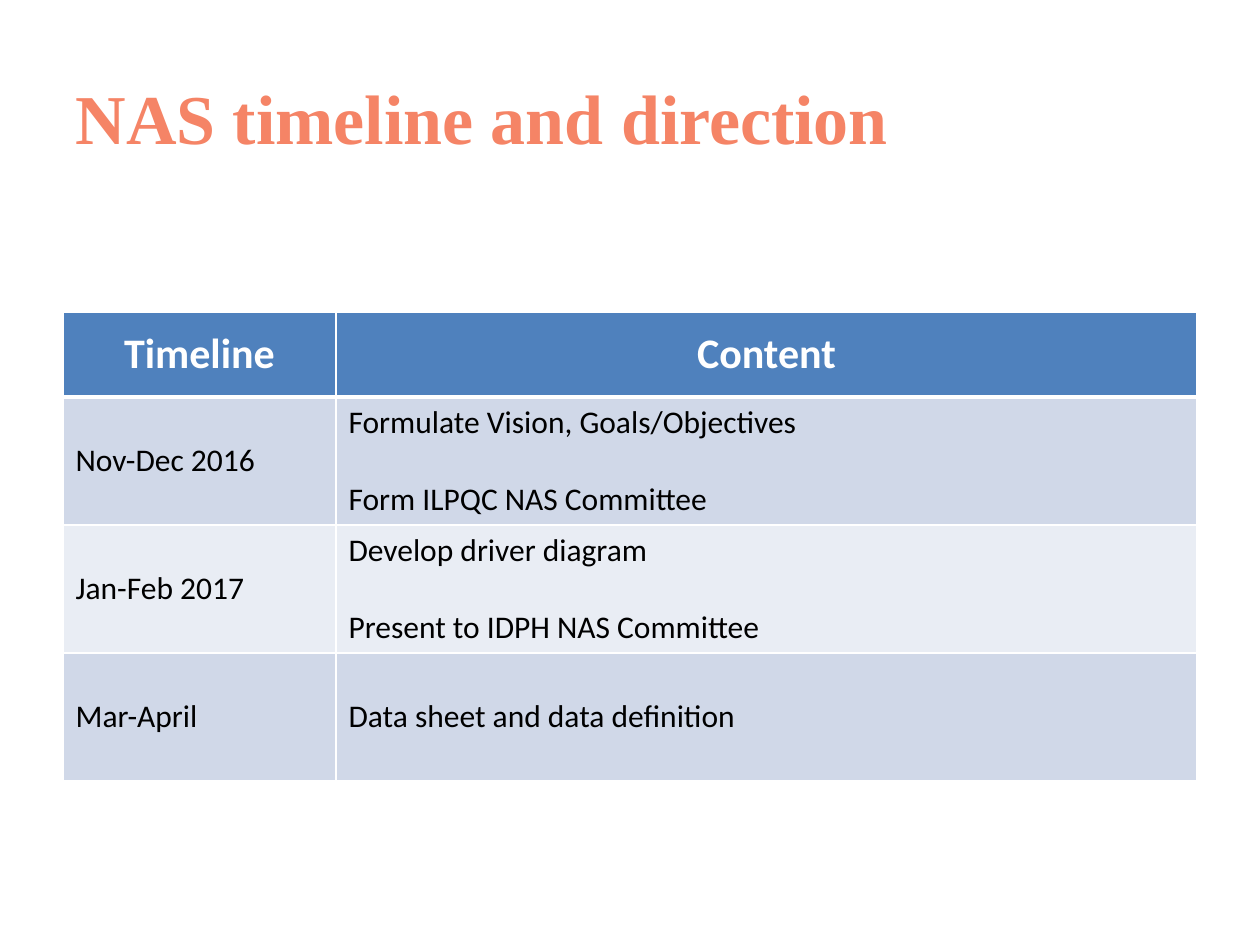
"""Build the NAS timeline slide with its title and schedule table."""
from lxml.etree import SubElement
from pptx import Presentation
from pptx.dml.color import RGBColor
from pptx.enum.text import MSO_ANCHOR, PP_ALIGN
from pptx.oxml.ns import qn
from pptx.util import Emu, Pt

PIXELS_PER_INCH = 126
CORAL = RGBColor(0xF5, 0x84, 0x66)
BLUE = RGBColor(0x4F, 0x81, 0xBD)
BAND_DARK = RGBColor(0xD0, 0xD8, 0xE8)
BAND_LIGHT = RGBColor(0xE9, 0xED, 0xF4)
WHITE = RGBColor(0xFF, 0xFF, 0xFF)
BLACK = RGBColor(0x00, 0x00, 0x00)

COLUMN_WIDTHS = (273, 861)
HEADER_HEIGHT = 85
ROW_HEIGHT = 128
ROWS = (
    ("Timeline", "Content"),
    ("Nov-Dec 2016", "Formulate Vision, Goals/Objectives\nForm ILPQC NAS Committee"),
    ("Jan-Feb 2017", "Develop driver diagram\nPresent to IDPH NAS Committee"),
    ("Mar-April", "Data sheet and data definition"),
)


def px(length):
    return Emu(round(length * 914400 / PIXELS_PER_INCH))


def format_paragraph(paragraph, font_name, size, color, bold, alignment):
    paragraph.alignment = alignment
    for run in paragraph.runs:
        run.font.name = font_name
        run.font.size = Pt(size)
        run.font.bold = bold
        run.font.color.rgb = color


def add_title(slide, text):
    title = slide.shapes.title
    title.left, title.top, title.width, title.height = px(63), px(38), px(1134), px(157)
    title.text_frame.text = text
    title.text_frame.vertical_anchor = MSO_ANCHOR.MIDDLE
    format_paragraph(title.text_frame.paragraphs[0], "Times New Roman", 40, CORAL, True, PP_ALIGN.LEFT)


def set_borders(cell, bottom_width):
    properties = cell._tc.get_or_add_tcPr()
    widths = {"a:lnL": 1, "a:lnR": 1, "a:lnT": 1, "a:lnB": bottom_width}
    for tag, width in widths.items():
        line = SubElement(properties, qn(tag), w=str(Pt(width)))
        fill = SubElement(line, qn("a:solidFill"))
        SubElement(fill, qn("a:srgbClr"), val=str(WHITE))


def fill_cell(cell, text, row_index):
    is_header = row_index == 0
    set_borders(cell, 3 if is_header else 1)
    cell.fill.solid()
    cell.fill.fore_color.rgb = BLUE if is_header else (BAND_LIGHT, BAND_DARK)[row_index % 2]
    cell.vertical_anchor = MSO_ANCHOR.MIDDLE
    cell.text_frame.text = text
    for index, paragraph in enumerate(cell.text_frame.paragraphs):
        if is_header:
            format_paragraph(paragraph, "Calibri", 24, WHITE, True, PP_ALIGN.CENTER)
        else:
            format_paragraph(paragraph, "Calibri", 18, BLACK, False, PP_ALIGN.LEFT)
        if index:
            paragraph.space_before = Pt(22)


def add_schedule(slide):
    heights = [HEADER_HEIGHT] + [ROW_HEIGHT] * (len(ROWS) - 1)
    table = slide.shapes.add_table(
        len(ROWS), len(COLUMN_WIDTHS), px(63), px(312), px(sum(COLUMN_WIDTHS)), px(sum(heights))
    ).table
    for column, width in zip(table.columns, COLUMN_WIDTHS):
        column.width = px(width)
    for row_index, (row, height, texts) in enumerate(zip(table.rows, heights, ROWS)):
        row.height = px(height)
        for cell, text in zip(row.cells, texts):
            fill_cell(cell, text, row_index)


def main():
    presentation = Presentation()
    presentation.slide_width, presentation.slide_height = px(1260), px(945)
    slide = presentation.slides.add_slide(presentation.slide_layouts[5])
    add_title(slide, "NAS timeline and direction")
    add_schedule(slide)
    presentation.save("out.pptx")


if __name__ == "__main__":
    main()
